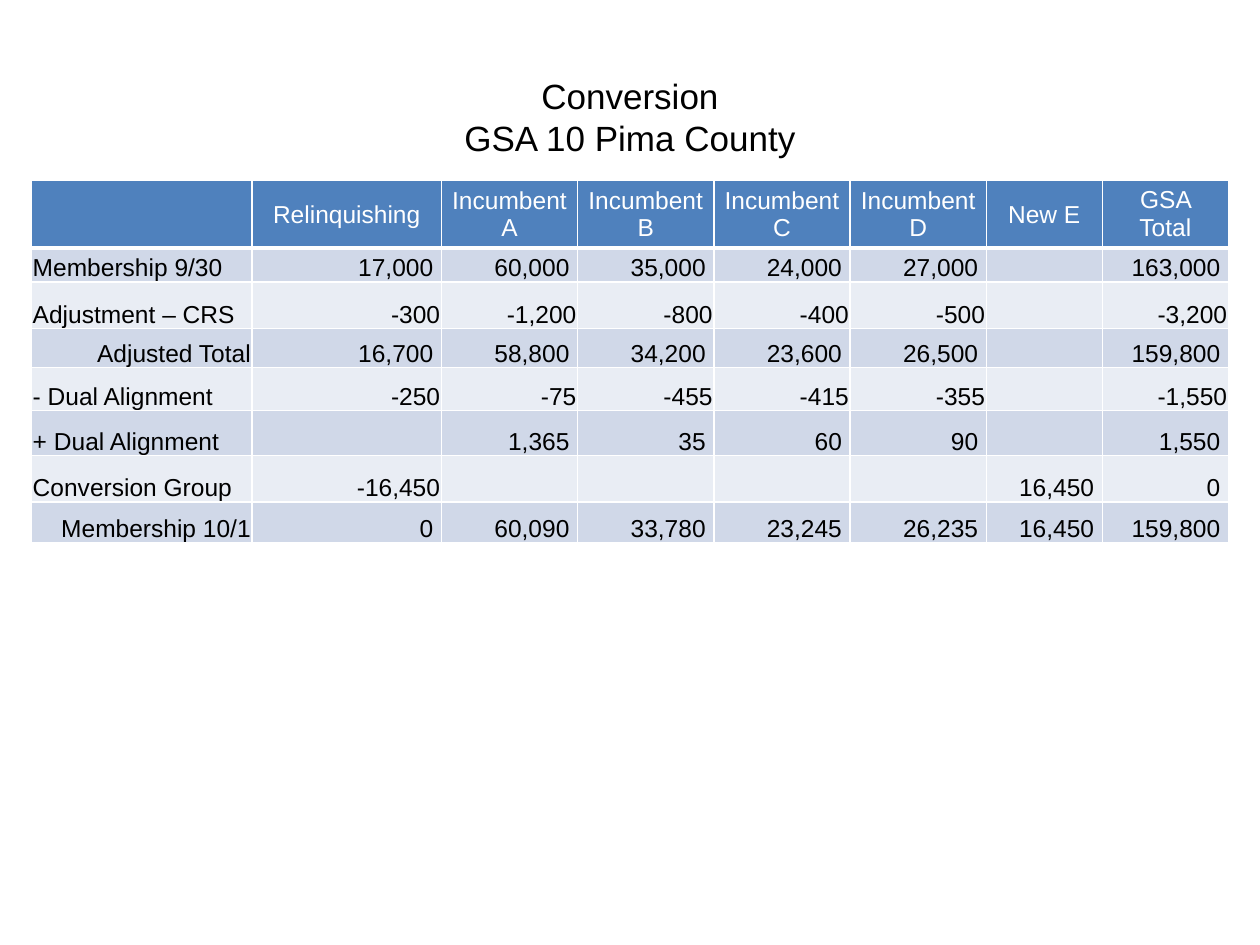
from lxml import etree
from pptx import Presentation
from pptx.dml.color import RGBColor
from pptx.enum.text import MSO_ANCHOR, PP_ALIGN
from pptx.oxml.ns import qn
from pptx.util import Inches, Pt

LEFT, CENTER, RIGHT = PP_ALIGN.LEFT, PP_ALIGN.CENTER, PP_ALIGN.RIGHT
MIDDLE, BOTTOM = MSO_ANCHOR.MIDDLE, MSO_ANCHOR.BOTTOM

BLACK = RGBColor(0x00, 0x00, 0x00)
WHITE = RGBColor(0xFF, 0xFF, 0xFF)
HEADER_BLUE = RGBColor(0x4F, 0x81, 0xBD)
BAND_DARK = RGBColor(0xD0, 0xD8, 0xE8)
BAND_LIGHT = RGBColor(0xE9, 0xED, 0xF4)

SLIDE_WIDTH, SLIDE_HEIGHT = Inches(10), Inches(7.5)
TITLE_BOX = (0.25, 0.3, 9.5, 1.25)
TABLE_BOX = (0.25, 1.43, 9.5, 2.84)
COLUMN_SHARES = [1.75, 1.5, 1.08, 1.08, 1.08, 1.08, 0.92, 1]
ROW_SHARES = [0.5, 0.27, 0.37, 0.31, 0.34, 0.36, 0.37, 0.32]

TITLE = "Conversion\vGSA 10 Pima County"
PLANS = ["", "Relinquishing", "Incumbent A", "Incumbent B", "Incumbent C",
         "Incumbent D", "New E", "GSA Total"]
MEMBERSHIP = [
    ("Membership 9/30", LEFT, [17000, 60000, 35000, 24000, 27000, None, 163000]),
    ("Adjustment – CRS", LEFT, [-300, -1200, -800, -400, -500, None, -3200]),
    ("Adjusted Total", RIGHT, [16700, 58800, 34200, 23600, 26500, None, 159800]),
    ("- Dual Alignment", LEFT, [-250, -75, -455, -415, -355, None, -1550]),
    ("+ Dual Alignment", LEFT, [None, 1365, 35, 60, 90, None, 1550]),
    ("Conversion Group", LEFT, [-16450, None, None, None, None, 16450, 0]),
    ("Membership 10/1", RIGHT, [0, 60090, 33780, 23245, 26235, 16450, 159800]),
]

TIGHT = {"margin_left": Inches(0.01), "margin_right": Inches(0.01),
         "margin_top": Inches(0.01), "margin_bottom": 0}
HEADER_CELL = {"vertical_anchor": MIDDLE, **TIGHT}
BODY_CELL = {"vertical_anchor": BOTTOM, **TIGHT}
TOTAL_HEADER_CELL = {"vertical_anchor": MIDDLE}


def apply(target, values):
    """Set every attribute in values on target."""
    for attribute, value in values.items():
        setattr(target, attribute, value)


def style_text(paragraph, size, color, alignment):
    """Format a paragraph and its runs in Arial."""
    paragraph.alignment = alignment
    for run in paragraph.runs:
        apply(run.font, {"name": "Arial", "size": Pt(size), "bold": False})
        run.font.color.rgb = color


def member_count(count):
    """Write a count, with a trailing space unless it is negative."""
    if count is None:
        return ""
    return f"{count:,}" if count < 0 else f"{count:,} "


def add_borders(cell, weights):
    """Draw white cell borders with the given weight in points per side."""
    properties = cell._tc.get_or_add_tcPr()
    for side, weight in weights.items():
        line = etree.SubElement(properties, qn(f"a:ln{side}"), w=str(Pt(weight)))
        fill = etree.SubElement(line, qn("a:solidFill"))
        etree.SubElement(fill, qn("a:srgbClr"), val=str(WHITE))


def fill_cell(cell, text, layout, alignment, color, background, borders):
    """Write and format one table cell."""
    cell.text = text
    apply(cell, layout)
    paragraph = cell.text_frame.paragraphs[0]
    style_text(paragraph, 14, color, alignment)
    etree.SubElement(paragraph._p, qn("a:endParaRPr"), sz="1400")
    add_borders(cell, borders)
    cell.fill.solid()
    cell.fill.fore_color.rgb = background


def place_title(slide, box):
    """Place the centred two-line title in box."""
    title = slide.shapes.title
    apply(title, dict(zip(("left", "top", "width", "height"), map(Inches, box))))
    frame = title.text_frame
    frame.text = TITLE
    apply(frame, {"word_wrap": True, "vertical_anchor": MIDDLE})
    style_text(frame.paragraphs[0], 20, BLACK, CENTER)


def place_membership_table(slide, box):
    """Place the membership table in box, sharing out its width and height."""
    left, top, width, height = map(Inches, box)
    table = slide.shapes.add_table(
        len(ROW_SHARES), len(COLUMN_SHARES), left, top, width, height).table
    apply(table, {"first_row": False, "horz_banding": False})
    for column, share in zip(table.columns, COLUMN_SHARES):
        column.width = int(width * share / sum(COLUMN_SHARES))
    for row, share in zip(table.rows, ROW_SHARES):
        row.height = int(height * share / sum(ROW_SHARES))

    for index, plan in enumerate(PLANS):
        layout = TOTAL_HEADER_CELL if plan == "GSA Total" else HEADER_CELL
        fill_cell(table.cell(0, index), plan, layout, CENTER, WHITE, HEADER_BLUE,
                  {"L": 1, "R": 1, "T": 1, "B": 3})

    for row, (label, label_alignment, counts) in enumerate(MEMBERSHIP, start=1):
        background = BAND_DARK if row % 2 else BAND_LIGHT
        borders = {"L": 1, "R": 1, "T": 3 if row == 1 else 1, "B": 1}
        texts = [label, *map(member_count, counts)]
        for index, text in enumerate(texts):
            alignment = RIGHT if index else label_alignment
            fill_cell(table.cell(row, index), text, BODY_CELL, alignment, BLACK,
                      background, borders)


def main():
    """Build the conversion slide and save it."""
    presentation = Presentation()
    apply(presentation, {"slide_width": SLIDE_WIDTH, "slide_height": SLIDE_HEIGHT})
    slide = presentation.slides.add_slide(
        presentation.slide_layouts.get_by_name("Title Only"))
    place_title(slide, TITLE_BOX)
    place_membership_table(slide, TABLE_BOX)
    presentation.save("out.pptx")


if __name__ == "__main__":
    main()
